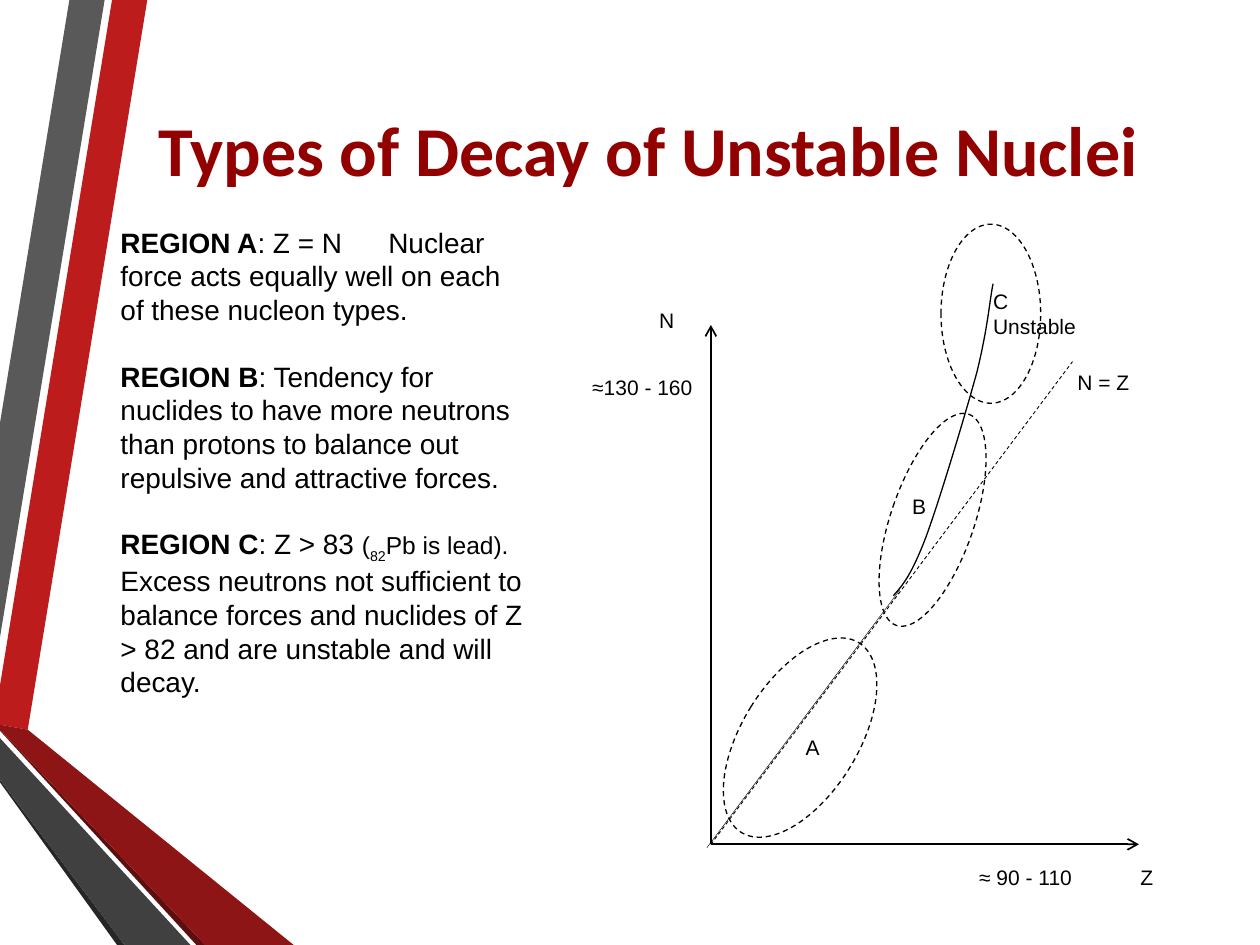
from lxml import etree
from pptx import Presentation
from pptx.dml.color import RGBColor
from pptx.enum.dml import MSO_LINE
from pptx.enum.shapes import MSO_CONNECTOR, MSO_SHAPE
from pptx.enum.text import MSO_ANCHOR, PP_ALIGN
from pptx.oxml.ns import qn
from pptx.util import Cm, Pt

DASH = MSO_LINE.DASH
STRAIGHT = MSO_CONNECTOR.STRAIGHT
OVAL = MSO_SHAPE.OVAL
MIDDLE = MSO_ANCHOR.MIDDLE
CENTER = PP_ALIGN.CENTER


def color(hex_string):
    return RGBColor.from_string(hex_string)


def bezier_points(start, segments, steps=12):
    points = [start]
    for first, second, end in segments:
        origin = points[-1]
        for step in range(1, steps + 1):
            t = step / steps
            weights = ((1 - t) ** 3, 3 * t * (1 - t) ** 2, 3 * t * t * (1 - t), t ** 3)
            points.append(tuple(
                sum(w * p[axis] for w, p in zip(weights, (origin, first, second, end)))
                for axis in (0, 1)))
    return points


class DecaySlide:
    ink = "000000"
    title_ink = "920000"
    text_font = "Arial"
    title_font = "Calibri"

    def __init__(self, slide):
        self.slide = slide
        self.shapes = slide.shapes

    def style_font(self, paragraph, size, name=text_font, ink=ink):
        font = paragraph.font
        font.name, font.size = name, Pt(size)
        font.color.rgb = color(ink)

    def style_line(self, line, width, dashed=False):
        line.color.rgb = color(self.ink)
        line.width = Pt(width)
        if dashed:
            line.dash_style = DASH

    def title(self, text, left, top, width, height):
        title = self.shapes.title
        title.left, title.top = Cm(left), Cm(top)
        title.width, title.height = Cm(width), Cm(height)
        title.text_frame.text = text
        title.text_frame.vertical_anchor = MIDDLE
        paragraph = title.text_frame.paragraphs[0]
        paragraph.alignment = CENTER
        self.style_font(paragraph, 40, self.title_font, self.title_ink)
        paragraph.font.bold = True

    def outline(self, points, closed):
        (x, y), *rest = points
        builder = self.shapes.build_freeform(Cm(x), Cm(y))
        builder.add_line_segments([(Cm(px), Cm(py)) for px, py in rest], close=closed)
        shape = builder.convert_to_shape()
        shape.shadow.inherit = False
        return shape

    def ribbon(self, fill, points):
        shape = self.outline(points, True)
        shape.fill.solid()
        shape.fill.fore_color.rgb = color(fill)
        shape.line.fill.background()

    def curve(self, start, segments):
        shape = self.outline(bezier_points(start, segments), False)
        shape.fill.background()
        self.style_line(shape.line, 0.75)

    def line(self, start, end, width, dashed=False, arrow=False):
        connector = self.shapes.add_connector(STRAIGHT, *map(Cm, start + end))
        self.style_line(connector.line, width, dashed)
        properties = connector._element.spPr
        if arrow:
            etree.SubElement(properties.find(qn("a:ln")), qn("a:tailEnd"), type="arrow")
        etree.SubElement(properties, qn("a:effectLst"))

    def region(self, left, top, width, height, rotation):
        ellipse = self.shapes.add_shape(OVAL, Cm(left), Cm(top), Cm(width), Cm(height))
        ellipse.rotation = rotation
        ellipse.shadow.inherit = False
        ellipse.fill.background()
        self.style_line(ellipse.line, 0.75, True)

    def text_box(self, left, top, width, height):
        frame = self.shapes.add_textbox(Cm(left), Cm(top), Cm(width), Cm(height)).text_frame
        frame.word_wrap = True
        return frame

    def label(self, text, left, top, width=0.53, height=1.12):
        frame = self.text_box(left, top, width, height)
        frame.margin_left = frame.margin_right = Cm(0.03)
        frame.margin_top = frame.margin_bottom = Cm(0.03)
        frame.text = text
        for paragraph in frame.paragraphs:
            self.style_font(paragraph, 12)

    def explanation(self, paragraphs, left, top, width, height, tab):
        frame = self.text_box(left, top, width, height)
        for index, (heading, body, small_parts) in enumerate(paragraphs):
            paragraph = frame.paragraphs[0] if index == 0 else frame.add_paragraph()
            self.style_font(paragraph, 16)
            if heading:
                paragraph.space_before = Pt(19 if index else 0)
                run = paragraph.add_run()
                run.text = heading
                run.font.bold = True
            paragraph.add_run().text = body
            for text, baseline in small_parts:
                run = paragraph.add_run()
                run.text = text
                run.font.size = Pt(14)
                if baseline:
                    run._r.get_or_add_rPr().set("baseline", str(baseline))
            if "\t" in body:
                stops = etree.Element(qn("a:tabLst"))
                etree.SubElement(stops, qn("a:tab"), pos=str(Cm(tab)), algn="l")
                paragraph._p.pPr.find(qn("a:defRPr")).addprevious(stops)


RIBBONS = [
    ("BC1C1C", [(0, 13.82), (0, 14.61), (0.56, 14.71), (2.97, 0), (2.26, 0)]),
    ("595959", [(2.11, 0), (1.4, 0), (0, 8.53), (0, 12.85)]),
    ("262626", [(0, 15.72), (0, 15.77), (2.36, 19.05), (2.51, 19.05)]),
    ("5E0E0E", [(0, 14.71), (0, 14.73), (3.96, 19.05), (4.14, 19.05)]),
    ("8D1515", [(0, 14.71), (4.14, 19.05), (5.92, 19.05), (0.56, 14.71), (0, 14.61)]),
    ("404040", [(0, 15.72), (2.51, 19.05), (3.84, 19.05), (0, 14.88)]),
]
ORIGIN = (14.33, 17.02)
LABELS = [
    ("A", 16.21, 14.78),
    ("C\nUnstable", 19.99, 5.79, 2.16, 1.88),
    ("B", 18.36, 9.91),
    ("N", 13.26, 6.17),
    ("Z", 22.96, 17.4),
    ("≈130 - 160", 11.91, 7.52, 2.16, 1.8),
    ("≈ 90 - 110", 19.71, 17.4, 3.25),
    ("N = Z", 21.69, 7.42, 1.57, 0.76),
]
REGIONS = [
    (14.96, 12.62, 2.34, 4.5, 31.8),
    (17.96, 8.23, 1.68, 4.5, 18.9),
    (18.97, 4.52, 2.01, 3.61, 0),
]
STABILITY_CURVE = [
    ((18.21, 11.79), (18.39, 11.56), (18.67, 10.82)),
    ((18.95, 10.06), (19.46, 8.36), (19.69, 7.52)),
    ((19.91, 6.65), (19.96, 5.99), (20.02, 5.72)),
]
EXPLANATION = [
    ("REGION A", ": Z = N\tNuclear force acts equally well on each of these nucleon types.", []),
    ("REGION B", ": Tendency for nuclides to have more neutrons than protons to balance out "
                 "repulsive and attractive forces.", []),
    ("REGION C", ": Z > 83 ", [("(", 0), ("82", -25000), ("Pb is lead).", 0)]),
    ("", "Excess neutrons not sufficient to balance forces and nuclides of Z > 82 and are "
         "unstable and will decay.", []),
]


def main():
    deck = Presentation()
    deck.slide_width, deck.slide_height = Cm(25.4), Cm(19.05)
    decay = DecaySlide(deck.slides.add_slide(deck.slide_layouts[5]))
    for fill, points in RIBBONS:
        decay.ribbon(fill, points)
    decay.title("Types of Decay of Unstable Nuclei", 2.36, 1.27, 21.41, 3.45)
    decay.line((18.14, 11.89), (14.25, 17.09), 0.25)
    decay.line(ORIGIN, (22.96, 17.02), 1, arrow=True)
    decay.line(ORIGIN, (14.33, 6.55), 1, arrow=True)
    decay.line(ORIGIN, (21.62, 7.29), 0.5, dashed=True)
    for label in LABELS:
        decay.label(*label)
    for region in REGIONS:
        decay.region(*region)
    decay.curve((18.01, 12.01), STABILITY_CURVE)
    decay.explanation(EXPLANATION, 2.18, 4.42, 8.76, 9.83, tab=5.4)
    deck.save("out.pptx")


if __name__ == "__main__":
    main()
